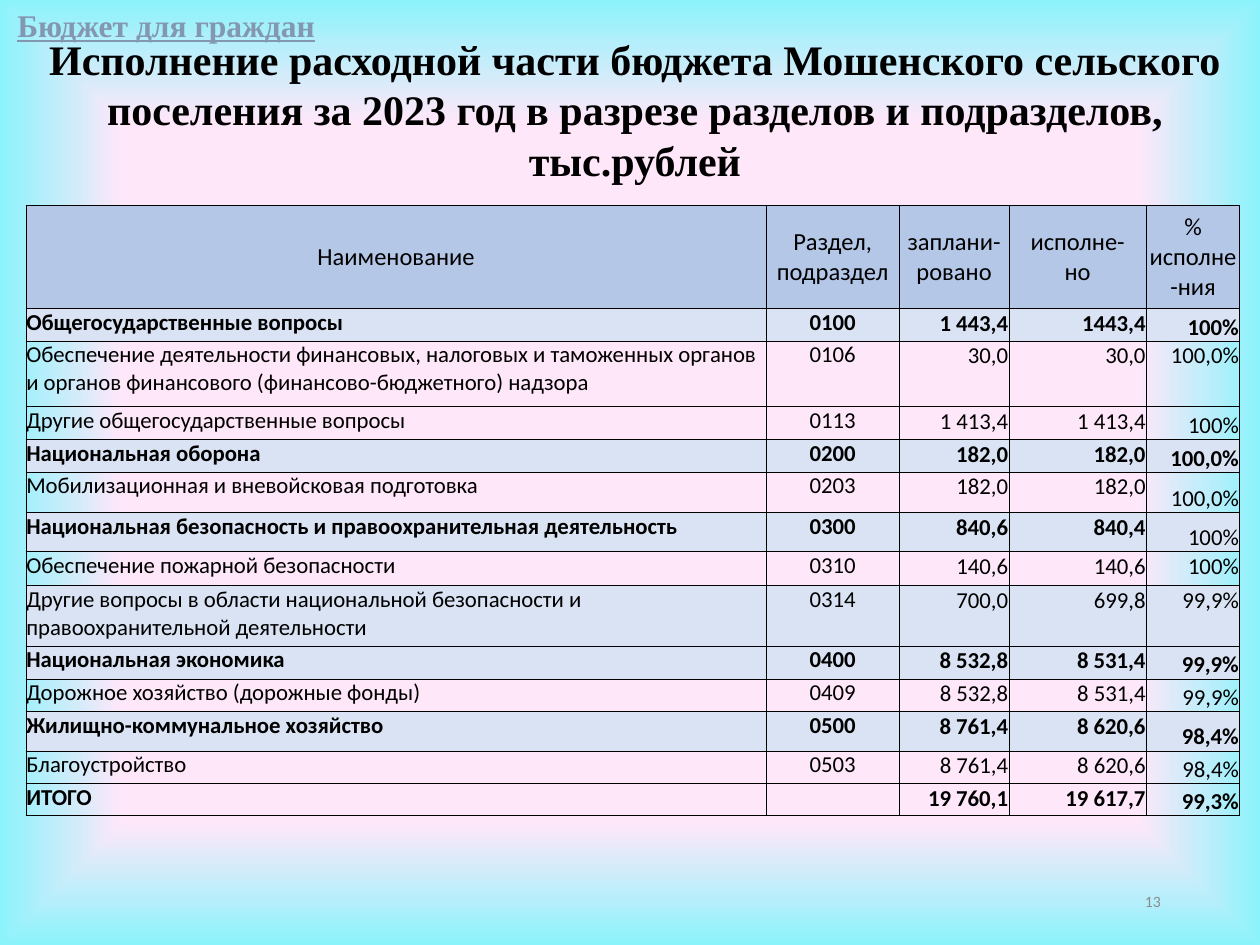
from lxml import etree
from pptx import Presentation
from pptx.dml.color import RGBColor
from pptx.enum.text import MSO_ANCHOR as ANCHOR, MSO_AUTO_SIZE as AUTO_SIZE, PP_ALIGN as ALIGN
from pptx.oxml import parse_xml
from pptx.oxml.ns import nsdecls, qn
from pptx.util import Cm, Pt

BLACK = RGBColor(0x00, 0x00, 0x00)
GREY = RGBColor(0x8C, 0x8C, 0x8C)
SLATE = RGBColor(0x84, 0x97, 0xB0)
HEADER_BLUE = RGBColor(0xB4, 0xC7, 0xE7)
SECTION_BLUE = RGBColor(0xDA, 0xE3, 0xF3)
PINK = RGBColor(0xFF, 0xE7, 0xFA)
CYAN = RGBColor(0x8B, 0xF3, 0xFB)
SKY = RGBColor(0xB5, 0xD2, 0xEC)
PALE_SKY = RGBColor(0xCE, 0xE1, 0xF2)

COL_WIDTHS = (14.91, 2.69, 2.21, 2.77, 1.88)
ROW_HEIGHTS = (2.08, 0.66, 1.32, 0.66, 0.66, 0.81, 0.79,
               0.69, 1.22, 0.66, 0.66, 0.79, 0.66, 0.64)
HEADER = ("Наименование", "Раздел, подраздел", "заплани-ровано",
          "исполне-\vно", "% исполне-ния")
ROWS = (
    ("Общегосударственные вопросы", "0100", "1 443,4", "1443,4", "100%"),
    ("Обеспечение деятельности финансовых, налоговых и таможенных органов и органов "
     "финансового (финансово-бюджетного) надзора", "0106", "30,0", "30,0", "100,0%"),
    ("Другие общегосударственные вопросы", "0113", "1 413,4", "1 413,4", "100%"),
    ("Национальная оборона", "0200", "182,0", "182,0", "100,0%"),
    ("Мобилизационная и вневойсковая подготовка", "0203", "182,0", "182,0", "100,0%"),
    ("Национальная безопасность и правоохранительная деятельность",
     "0300", "840,6", "840,4", "100%"),
    ("Обеспечение пожарной безопасности", "0310", "140,6", "140,6", "100%"),
    ("Другие вопросы в области национальной безопасности и правоохранительной деятельности",
     "0314", "700,0", "699,8", "99,9%"),
    ("Национальная экономика", "0400", "8 532,8", "8 531,4", "99,9%"),
    ("Дорожное хозяйство (дорожные фонды)", "0409", "8 532,8", "8 531,4", "99,9%"),
    ("Жилищно-коммунальное хозяйство", "0500", "8 761,4", "8 620,6", "98,4%"),
    ("Благоустройство", "0503", "8 761,4", "8 620,6", "98,4%"),
    ("ИТОГО", "", "19 760,1", "19 617,7", "99,3%"),
)
TOP_PERCENT_CODES = ("0106", "0310", "0314")
ALIGNS = (ALIGN.LEFT, ALIGN.CENTER, ALIGN.RIGHT, ALIGN.RIGHT, ALIGN.RIGHT)


class BudgetSlide:
    """Holds the style and the slide being filled."""
    serif, sans = "Times New Roman", "Calibri"

    def __init__(self, prs):
        self.slide = prs.slides.add_slide(prs.slide_layouts[5])

    def set_text(self, tf, text, size, color=BLACK, font=None, bold=False, align=ALIGN.LEFT):
        p = tf.paragraphs[0]
        p.text = text
        p.alignment = align
        p.font.name = font or self.sans
        p.font.size = Pt(size)
        p.font.bold = bold
        p.font.color.rgb = color
        return p

    def background(self, stops):
        """Gradient that spreads from the centre; stops are (percent, colour)."""
        gs = "".join(f'<a:gs pos="{pos * 1000}"><a:srgbClr val="{color}"/></a:gs>'
                     for pos, color in stops)
        bg = parse_xml(
            f'<p:bg {nsdecls("p", "a")}><p:bgPr><a:gradFill><a:gsLst>{gs}</a:gsLst>'
            '<a:path path="shape"><a:fillToRect l="50000" t="50000" r="50000" b="50000"/>'
            '</a:path></a:gradFill><a:effectLst/></p:bgPr></p:bg>')
        self.slide.element.cSld.insert(0, bg)

    def title(self, text, left, top, width, height):
        sp = self.slide.shapes.title
        sp.left, sp.top, sp.width, sp.height = Cm(left), Cm(top), Cm(width), Cm(height)
        tf = sp.text_frame
        tf.margin_top = Cm(0.2)
        tf.vertical_anchor = ANCHOR.MIDDLE
        tf.auto_size = AUTO_SIZE.NONE
        self.set_text(tf, text, 24, font=self.serif, bold=True, align=ALIGN.CENTER)

    def text(self, text, left, top, width, height, size, wrap=True,
             anchor=ANCHOR.TOP, **style):
        tf = self.slide.shapes.add_textbox(
            Cm(left), Cm(top), Cm(width), Cm(height)).text_frame
        tf.word_wrap = wrap
        tf.vertical_anchor = anchor
        return self.set_text(tf, text, size, **style)

    def borders(self, cell):
        tc_pr = cell._tc.get_or_add_tcPr()
        for side in ("lnL", "lnR", "lnT", "lnB"):
            ln = etree.SubElement(tc_pr, qn(f"a:{side}"), w=str(Pt(0.5)))
            fill = etree.SubElement(ln, qn("a:solidFill"))
            etree.SubElement(fill, qn("a:srgbClr"), val=str(BLACK))

    def cell(self, cell, text, size, fill=None, margin=0, anchor=ANCHOR.TOP, **style):
        cell.margin_left = cell.margin_right = cell.margin_top = Cm(margin)
        cell.margin_bottom = 0
        cell.vertical_anchor = anchor
        self.borders(cell)
        if fill is None:
            cell.fill.background()
        else:
            cell.fill.solid()
            cell.fill.fore_color.rgb = fill
        self.set_text(cell.text_frame, text, size, **style)

    def table(self, left, top):
        table = self.slide.shapes.add_table(
            len(ROW_HEIGHTS), len(COL_WIDTHS), Cm(left), Cm(top),
            Cm(sum(COL_WIDTHS)), Cm(sum(ROW_HEIGHTS))).table
        table.first_row = table.horz_banding = False
        for column, width in zip(table.columns, COL_WIDTHS):
            column.width = Cm(width)
        for row, height in zip(table.rows, ROW_HEIGHTS):
            row.height = Cm(height)
        for c, text in enumerate(HEADER):
            self.cell(table.cell(0, c), text, 14, HEADER_BLUE,
                      anchor=ANCHOR.MIDDLE, align=ALIGN.CENTER)
        for r, values in enumerate(ROWS, 1):
            code = values[1]
            section = code.endswith("00")
            fill = SECTION_BLUE if section or code == "0314" else None
            for c, text in enumerate(values):
                percent = c == len(values) - 1
                low = percent and code not in TOP_PERCENT_CODES
                bold = (section or not code) and not (percent and code == "0300")
                self.cell(table.cell(r, c), text, 13, fill,
                          margin=0.02 if c > 1 else 0,
                          anchor=ANCHOR.BOTTOM if low else ANCHOR.TOP,
                          bold=bold, align=ALIGNS[c])


def main():
    prs = Presentation()
    prs.slide_width, prs.slide_height = Cm(25.4), Cm(19.05)
    s = BudgetSlide(prs)
    s.background(((74, PINK), (100, CYAN), (100, SKY), (100, PALE_SKY)))
    s.title("Исполнение расходной части бюджета Мошенского сельского поселения "
            "за 2023 год в разрезе разделов и подразделов, тыс.рублей",
            0.1, 0.46, 25.4, 3.4)
    s.table(0.53, 4.14)
    s.text("13", 17.93, 17.65, 5.72, 1.02, 9, anchor=ANCHOR.MIDDLE,
           color=GREY, align=ALIGN.RIGHT)
    p = s.text("Бюджет для граждан", 0.1, 0, 6.58, 1.02, 18, wrap=False,
               color=SLATE, font=s.serif, bold=True)
    p.font.underline = True
    prs.save("out.pptx")


if __name__ == "__main__":
    main()
